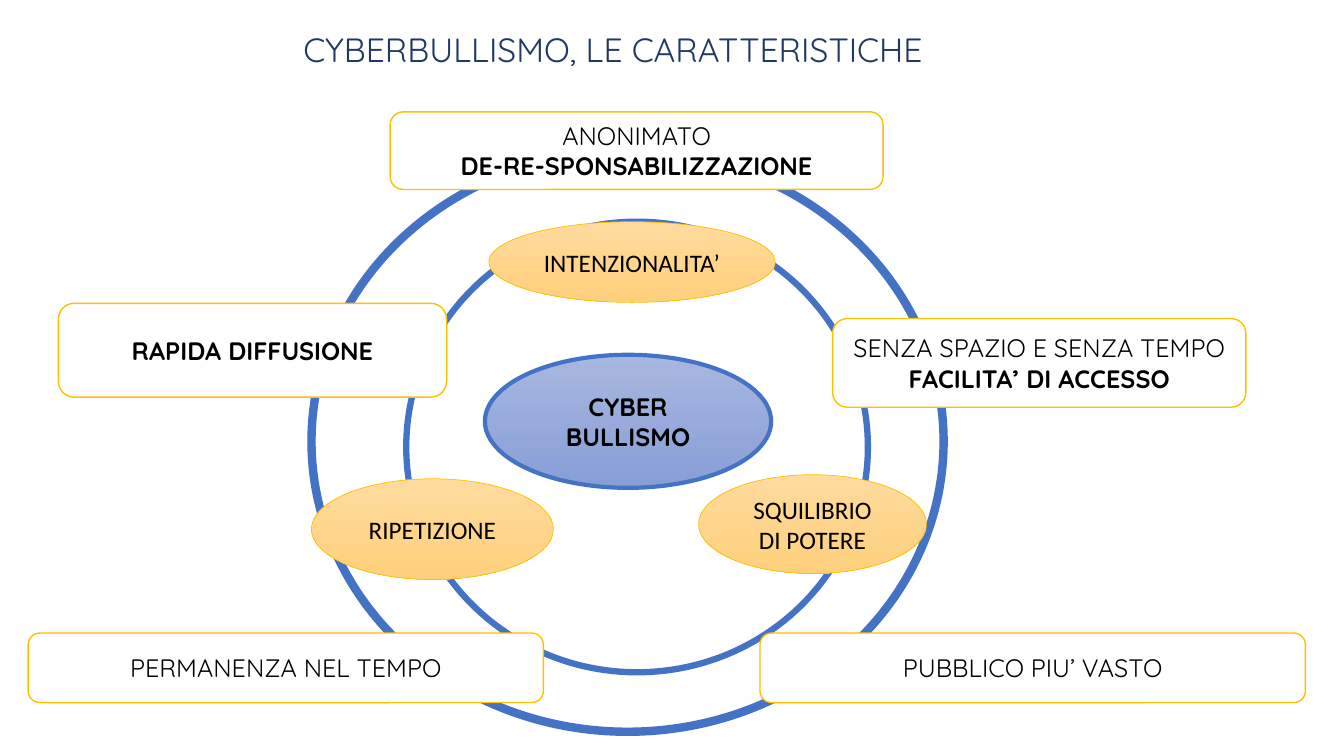
from pptx import Presentation
from pptx import util as u
from pptx.dml.color import RGBColor
from pptx.enum import shapes, text

BLUE, GOLD, WHITE, BLACK, NAVY = "4472C4", "FFC000", "FFFFFF", "000000", "203864"
BLUE_FADE = ("A8B7DF", "889ED7")
GOLD_FADE = ("FFDB9E", "FFD07C")
OVAL = shapes.MSO_SHAPE.OVAL
CARD = shapes.MSO_SHAPE.ROUNDED_RECTANGLE


def color(value):
    return RGBColor.from_string(value)


def share(box, left, top, width, height):
    box_left, box_top, box_width, box_height = box
    return (int(box_left + box_width * left / 100),
            int(box_top + box_height * top / 100),
            int(box_width * width / 100),
            int(box_height * height / 100))


def write(shape, lines, font, size, ink, align):
    frame = shape.text_frame
    frame.word_wrap = True
    for index, (words, bold) in enumerate(lines):
        paragraph = frame.paragraphs[0] if index == 0 else frame.add_paragraph()
        paragraph.text = words
        paragraph.alignment = align
        paragraph.font.name = font
        paragraph.font.size = u.Pt(size)
        paragraph.font.bold = bold
        paragraph.font.color.rgb = color(ink)


def add_figure(slide, kind, place, fills, line, weight, lines=(), font="Quicksand"):
    shape = slide.shapes.add_shape(kind, *place)
    shape.shadow.inherit = False
    if len(fills) == 1:
        shape.fill.solid()
        shape.fill.fore_color.rgb = color(fills[0])
    else:
        shape.fill.gradient()
        shape.fill.gradient_angle = 270
        for stop, shade in zip(shape.fill.gradient_stops, fills):
            stop.color.rgb = color(shade)
    shape.line.color.rgb = color(line)
    shape.line.width = u.Pt(weight)
    shape.text_frame.vertical_anchor = text.MSO_ANCHOR.MIDDLE
    write(shape, lines, font, 18, BLACK, text.PP_ALIGN.CENTER)


def draw_title(slide, box):
    title = slide.shapes.add_textbox(*share(box, 21.83, 3.2, 64.05, 6.67))
    write(title, [("CYBERBULLISMO, LE CARATTERISTICHE", False)],
          "Quicksand", 24, NAVY, text.PP_ALIGN.LEFT)


def draw_rings(slide, box):
    rings = [((23.18, 20, 47.03, 76.8), 6), ((30.23, 29.33, 34.35, 59.6), 4.5)]
    for place, weight in rings:
        add_figure(slide, OVAL, share(box, *place), [WHITE], BLUE, weight)


def draw_core(slide, box):
    add_figure(slide, OVAL, share(box, 36.08, 46.93, 21.3, 17.6), BLUE_FADE, BLUE, 3,
               [("CYBER", True), ("BULLISMO", True)])


def draw_traits(slide, box):
    traits = [
        ((36.38, 29.33, 21.3, 10.67), "INTENZIONALITA’"),
        ((23.18, 63.33, 18, 13.33), "RIPETIZIONE"),
        ((51.98, 62.8, 16.95, 13.07), "SQUILIBRIO DI POTERE"),
    ]
    for place, words in traits:
        add_figure(slide, OVAL, share(box, *place), GOLD_FADE, GOLD, 0.5,
                   [(words, False)], "Calibri")


def draw_cards(slide, box):
    cards = [
        ((29.03, 14.8, 36.68, 10.27),
         [("ANONIMATO", False), ("DE-RE-SPONSABILIZZAZIONE", True)]),
        ((4.35, 40.13, 28.88, 12.4), [("RAPIDA DIFFUSIONE", True)]),
        ((61.95, 42.13, 30.75, 11.73),
         [("SENZA SPAZIO E SENZA TEMPO", False), ("FACILITA’ DI ACCESSO", True)]),
        ((56.55, 83.73, 40.58, 9.2), [("PUBBLICO PIU’ VASTO", False)]),
        ((2.1, 83.73, 38.33, 9.2), [("PERMANENZA NEL TEMPO", False)]),
    ]
    for place, lines in cards:
        add_figure(slide, CARD, share(box, *place), [WHITE], GOLD, 1, lines)


def main():
    presentation = Presentation()
    presentation.slide_width = u.Inches(13.33)
    presentation.slide_height = u.Inches(7.5)
    slide = presentation.slides.add_slide(presentation.slide_layouts[6])
    page = (0, 0, presentation.slide_width, presentation.slide_height)
    for draw in (draw_title, draw_rings, draw_core, draw_traits, draw_cards):
        draw(slide, page)
    presentation.save("out.pptx")


if __name__ == "__main__":
    main()
